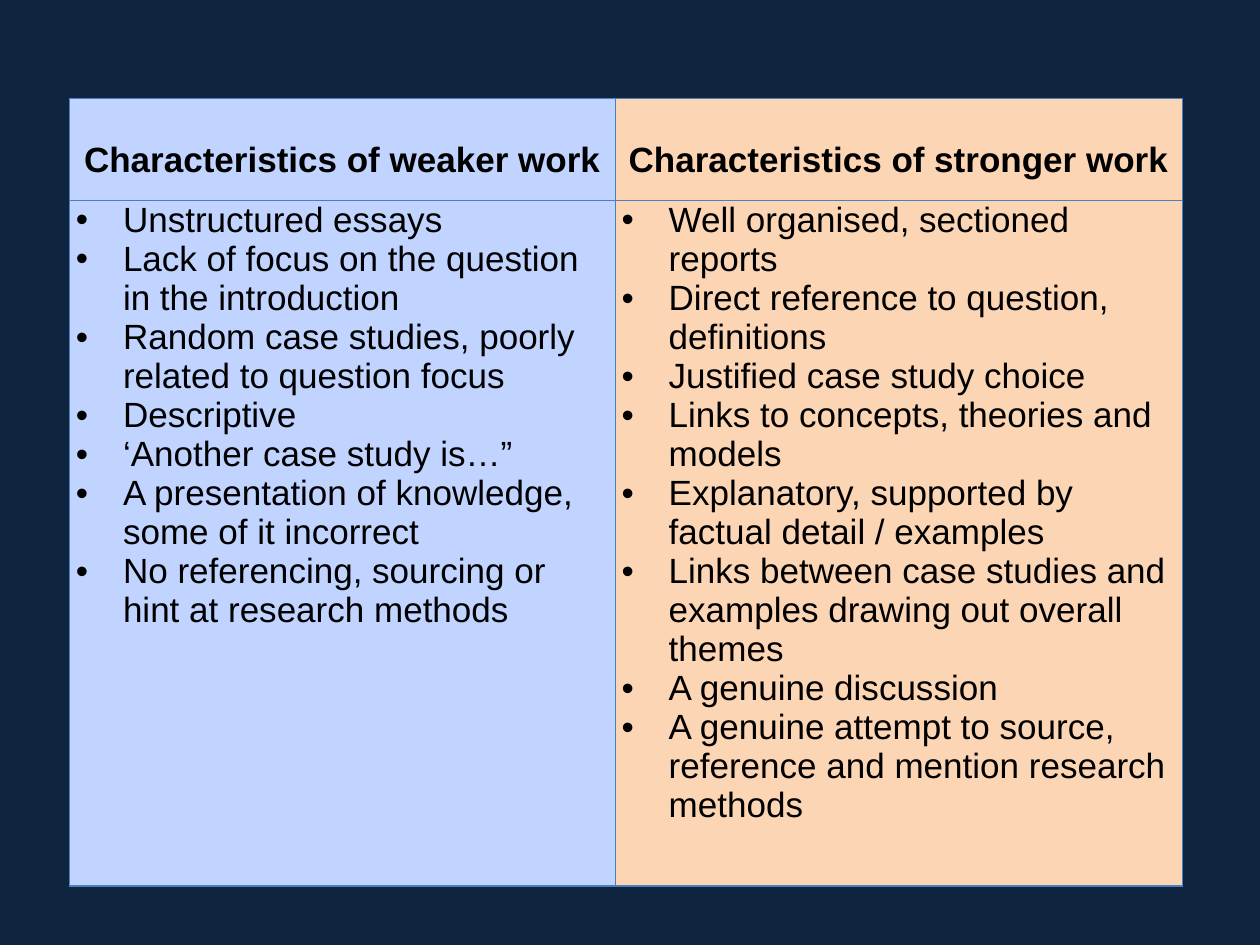
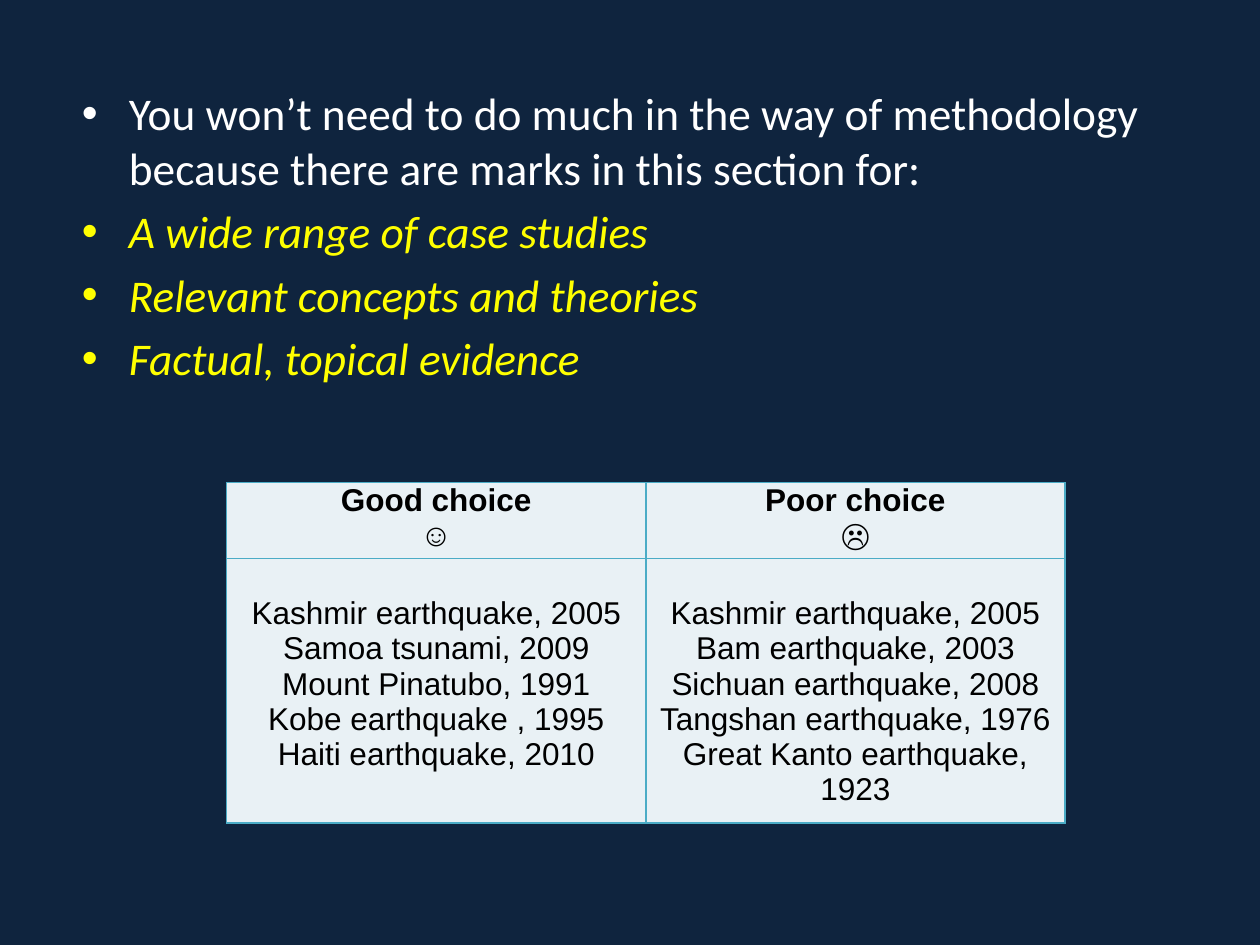
from lxml.etree import SubElement
from pptx import Presentation
from pptx.dml.color import RGBColor
from pptx.enum.text import PP_ALIGN
from pptx.oxml.ns import qn
from pptx.util import Cm, Pt

NAVY, WHITE, YELLOW, BLACK = "0F243E", "FFFFFF", "FFFF00", "000000"
WEAK_BLUE, STRONG_PEACH, CHOICE_GREY = "C0D4FF", "FCD5B5", "E9F1F5"
HANGING = 0.95

WEAKER = [
    "Unstructured essays",
    "Lack of focus on the question in the introduction",
    "Random case studies, poorly related to question focus",
    "Descriptive",
    "‘Another case study is…”",
    "A presentation of knowledge, some of it incorrect",
    "No referencing, sourcing or hint at research methods",
]
STRONGER = [
    "Well organised, sectioned reports",
    "Direct reference to question, definitions",
    "Justified case study choice",
    "Links to concepts, theories and models",
    "Explanatory, supported by factual detail / examples",
    "Links between case studies and examples drawing out overall themes",
    "A genuine discussion",
    "A genuine attempt to source, reference and mention research methods",
]
GOOD = [
    "Kashmir earthquake, 2005",
    "Samoa tsunami, 2009",
    "Mount Pinatubo, 1991",
    "Kobe earthquake , 1995",
    "Haiti earthquake, 2010",
]
POOR = [
    "Kashmir earthquake, 2005",
    "Bam earthquake, 2003",
    "Sichuan earthquake, 2008",
    "Tangshan earthquake, 1976",
    "Great Kanto earthquake, 1923",
]
MARKED = [
    "A wide range of case studies",
    "Relevant concepts and theories",
    "Factual, topical evidence",
]


def rgb(value):
    """Turn a hex string into a colour."""
    return RGBColor.from_string(value)


def add_navy_slide(deck):
    """Add a blank slide with the shared dark background."""
    slide = deck.slides.add_slide(deck.slide_layouts[6])
    slide.background.fill.solid()
    slide.background.fill.fore_color.rgb = rgb(NAVY)
    return slide


def write_lines(frame, lines, size, font="Arial", color=BLACK, bold=False, italic=False):
    """Write one paragraph per line and return the paragraphs."""
    paragraphs = []
    for line in lines:
        first = not frame.paragraphs[0].runs
        paragraph = frame.paragraphs[0] if first else frame.add_paragraph()
        run = paragraph.add_run()
        run.text = line
        run.font.name, run.font.size = font, Pt(size)
        run.font.bold, run.font.italic = bold, italic
        run.font.color.rgb = rgb(color)
        paragraphs.append(paragraph)
    return paragraphs


def add_bullets(paragraphs):
    """Give paragraphs a round bullet and a hanging indent."""
    for paragraph in paragraphs:
        properties = paragraph._p.get_or_add_pPr()
        properties.set("marL", str(Cm(HANGING)))
        properties.set("indent", str(-Cm(HANGING)))
        SubElement(properties, qn("a:buFont"), typeface="Arial")
        SubElement(properties, qn("a:buChar"), char="•")


def center(paragraphs):
    """Centre paragraphs."""
    for paragraph in paragraphs:
        paragraph.alignment = PP_ALIGN.CENTER


def style_cell(cell, fill, border, width, inset, top):
    """Set the margins, borders and fill of a cell."""
    cell.margin_left = cell.margin_right = Cm(inset)
    cell.margin_top, cell.margin_bottom = Cm(top), 0
    for side in ("lnL", "lnR", "lnT", "lnB"):
        line = SubElement(cell._tc.get_or_add_tcPr(), qn(f"a:{side}"), w=str(Pt(width)))
        solid = SubElement(line, qn("a:solidFill"))
        SubElement(solid, qn("a:srgbClr"), val=border)
    cell.fill.solid()
    cell.fill.fore_color.rgb = rgb(fill)


def add_two_column_table(slide, left, top, widths, heights, columns, fills, tops,
                         border, line_width, inset, size, format_body):
    """Add a table of bold centred headings above lists of lines."""
    frame = slide.shapes.add_table(2, 2, Cm(left), Cm(top), Cm(sum(widths)), Cm(sum(heights)))
    table = frame.table
    table.first_row = table.horz_banding = False
    for row, height in zip(table.rows, heights):
        row.height = Cm(height)
    for index, (heading, body) in enumerate(columns):
        table.columns[index].width = Cm(widths[index])
        heading_cell, body_cell = table.cell(0, index), table.cell(1, index)
        for cell, margin in zip((heading_cell, body_cell), tops):
            style_cell(cell, fills[index], border, line_width, inset, margin)
        center(write_lines(heading_cell.text_frame, heading, size, bold=True))
        format_body(write_lines(body_cell.text_frame, body, size))


def add_marks_list(slide, left, top, width, height):
    """Add the bulleted advice on where the marks are."""
    frame = slide.shapes.add_textbox(Cm(left), Cm(top), Cm(width), Cm(height)).text_frame
    frame.word_wrap = True
    advice = write_lines(
        frame,
        ["You won’t need to do much in the way of methodology because there are marks"
         " in this section for:"],
        25.9, "Calibri", WHITE)
    marked = write_lines(frame, MARKED, 25.9, "Calibri", YELLOW, italic=True)
    for paragraph in marked:
        paragraph.space_before = Pt(5.2)
    add_bullets(advice + marked)


def build_characteristics_slide(deck):
    """Compare weaker with stronger work."""
    add_two_column_table(
        add_navy_slide(deck), 1.4, 1.98, (11, 11.43), (2.06, 13.82),
        [(["Characteristics of weaker work"], WEAKER),
         (["Characteristics of stronger work"], STRONGER)],
        (WEAK_BLUE, STRONG_PEACH), (0.86, 0), "4B7EBC", 0.75, 0.13, 20, add_bullets)


def build_case_study_slide(deck):
    """Show what earns marks, and good and poor sets of case studies."""
    slide = add_navy_slide(deck)
    add_marks_list(slide, 1.4, 1.6, 23, 7.14)
    add_two_column_table(
        slide, 4.57, 9.73, (8.45, 8.45), (1.42, 5.03),
        [(["Good choice", "☺"], GOOD), (["Poor choice", "☹"], POOR)],
        (CHOICE_GREY, CHOICE_GREY), (0, 0.76), "4BACC6", 1, 0.18, 18, center)


def main():
    """Build and save the deck."""
    deck = Presentation()
    deck.slide_width, deck.slide_height = Cm(25.4), Cm(19.05)
    build_characteristics_slide(deck)
    build_case_study_slide(deck)
    deck.save("out.pptx")


if __name__ == "__main__":
    main()
